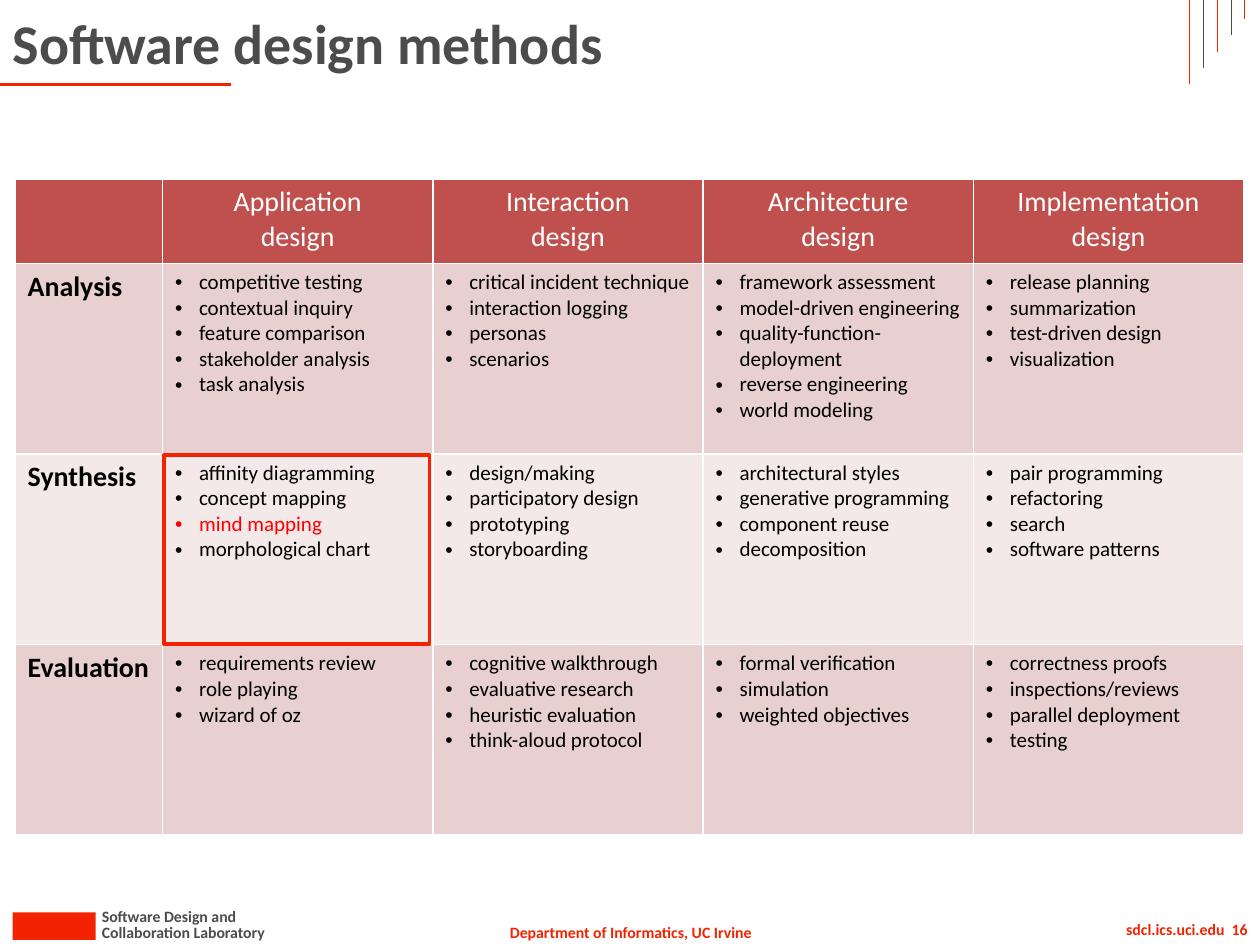
from lxml.etree import SubElement
from pptx import Presentation
from pptx.dml.color import RGBColor
from pptx.enum.shapes import MSO_CONNECTOR, MSO_SHAPE
from pptx.enum.text import MSO_ANCHOR, PP_ALIGN
from pptx.oxml.ns import qn
from pptx.util import Inches, Pt

RED = RGBColor(0xF3, 0x22, 0x00)
BRIGHT_RED = RGBColor(0xFF, 0x00, 0x00)
GRAY = RGBColor(0x4C, 0x4C, 0x4C)
BLACK = RGBColor(0x00, 0x00, 0x00)
WHITE = RGBColor(0xFF, 0xFF, 0xFF)
HEADER_FILL = RGBColor(0xC0, 0x50, 0x4D)
ROW_FILLS = [RGBColor(0xE8, 0xD0, 0xD0), RGBColor(0xF4, 0xE9, 0xE9)]

STAGES = ["Application\vdesign", "Interaction\vdesign",
          "Architecture\vdesign", "Implementation\vdesign"]
METHODS = {
    "Analysis": [
        ["competitive testing", "contextual inquiry", "feature comparison",
         "stakeholder analysis", "task analysis"],
        ["critical incident technique", "interaction logging", "personas", "scenarios"],
        ["framework assessment", "model-driven engineering",
         "quality-function-deployment", "reverse engineering", "world modeling"],
        ["release planning", "summarization", "test-driven design", "visualization"],
    ],
    "Synthesis": [
        ["affinity diagramming", "concept mapping", "mind mapping", "morphological chart"],
        ["design/making", "participatory design", "prototyping", "storyboarding"],
        ["architectural styles", "generative programming", "component reuse",
         "decomposition"],
        ["pair programming", "refactoring", "search", "software patterns"],
    ],
    "Evaluation": [
        ["requirements review", "role playing", "wizard of oz"],
        ["cognitive walkthrough", "evaluative research", "heuristic evaluation",
         "think-aloud protocol"],
        ["formal verification", "simulation", "weighted objectives"],
        ["correctness proofs", "inspections/reviews", "parallel deployment", "testing"],
    ],
}
HIGHLIGHTED_METHOD = "mind mapping"


def write_text(para, text, size=12, color=BLACK, bold=False,
               align=PP_ALIGN.LEFT, bullet=False):
    para.text = text
    para.alignment = align
    for span in para.runs:
        span.font.name = "Calibri"
        span.font.size = Pt(size)
        span.font.bold = bold
        span.font.color.rgb = color
    if bullet:
        properties = para._p.get_or_add_pPr()
        properties.set("marL", str(Inches(0.19)))
        properties.set("indent", str(-Inches(0.19)))
        SubElement(properties, qn("a:buFont"), typeface="Arial")
        SubElement(properties, qn("a:buChar"), char="•")


class SlideBuilder:
    def __init__(self, page):
        self.page = page

    def title(self, text, left, top, width, height):
        box = self.page.shapes.title
        box.left, box.top = Inches(left), Inches(top)
        box.width, box.height = Inches(width), Inches(height)
        box.text_frame.vertical_anchor = MSO_ANCHOR.MIDDLE
        write_text(box.text_frame.paragraphs[0], text, size=32, color=GRAY, bold=True)

    def label(self, text, left, top, width, height, wrap=False, **style):
        box = self.page.shapes.add_textbox(
            Inches(left), Inches(top), Inches(width), Inches(height))
        box.text_frame.word_wrap = wrap
        write_text(box.text_frame.paragraphs[0], text, size=9, bold=True, **style)

    def line(self, start, end, color, weight):
        connector = self.page.shapes.add_connector(
            MSO_CONNECTOR.STRAIGHT, *map(Inches, start + end))
        connector.line.color.rgb = color
        connector.line.width = Pt(weight)
        SubElement(connector._element.spPr, qn("a:effectLst"))

    def rectangle(self, left, top, width, height, fill=None):
        shape = self.page.shapes.add_shape(
            MSO_SHAPE.RECTANGLE, Inches(left), Inches(top), Inches(width), Inches(height))
        shape.shadow.inherit = False
        if fill is None:
            shape.fill.background()
            shape.line.color.rgb = RED
            shape.line.width = Pt(2)
        else:
            shape.fill.solid()
            shape.fill.fore_color.rgb = fill
            shape.line.fill.background()

    def cell(self, cell, fill):
        properties = cell._tc.get_or_add_tcPr()
        for side in "LRTB":
            border = SubElement(properties, qn(f"a:ln{side}"), w=str(Pt(1)))
            paint = SubElement(border, qn("a:solidFill"))
            SubElement(paint, qn("a:srgbClr"), val=str(WHITE))
        cell.fill.solid()
        cell.fill.fore_color.rgb = fill

    def table(self, left, top, width, height, label_width, header_height):
        grid = self.page.shapes.add_table(
            len(METHODS) + 1, len(STAGES) + 1,
            Inches(left), Inches(top), Inches(width), Inches(height)).table
        grid.horz_banding = False
        stage_width = (width - label_width) / len(STAGES)
        for index, column in enumerate(grid.columns):
            column.width = Inches(stage_width if index else label_width)
        method_height = (height - header_height) / len(METHODS)
        for index, row in enumerate(grid.rows):
            row.height = Inches(method_height if index else header_height)

        for column, stage in enumerate([""] + STAGES):
            header = grid.cell(0, column)
            self.cell(header, HEADER_FILL)
            write_text(header.text_frame.paragraphs[0], stage, size=16,
                       color=WHITE, align=PP_ALIGN.CENTER)

        for row, (activity, groups) in enumerate(METHODS.items(), start=1):
            fill = ROW_FILLS[(row - 1) % 2]
            name = grid.cell(row, 0)
            self.cell(name, fill)
            write_text(name.text_frame.paragraphs[0], activity, size=16, bold=True)
            for column, methods in enumerate(groups, start=1):
                entry = grid.cell(row, column)
                self.cell(entry, fill)
                frame = entry.text_frame
                for index, method in enumerate(methods):
                    para = frame.add_paragraph() if index else frame.paragraphs[0]
                    color = BRIGHT_RED if method == HIGHLIGHTED_METHOD else BLACK
                    write_text(para, method, color=color, bullet=True)


def main():
    deck = Presentation()
    deck.slide_width, deck.slide_height = Inches(10), Inches(7.5)
    builder = SlideBuilder(deck.slides.add_slide(deck.slide_layouts[5]))

    builder.label("Department of Informatics, UC Irvine", 3.93, 7.27, 2.15, 0.25,
                  color=RED, align=PP_ALIGN.CENTER)
    builder.rectangle(0.1, 7.24, 0.66, 0.22, fill=RED)
    builder.label("Collaboration Laboratory", 0.71, 7.27, 1.53, 0.25, color=GRAY)
    builder.label("Software Design and", 0.71, 7.15, 1.29, 0.25, color=GRAY)
    builder.label("sdcl.ics.uci.edu  16", 7.84, 7.25, 2.16, 0.25, wrap=True,
                  color=RED, align=PP_ALIGN.RIGHT)

    builder.line((0, 0.67), (1.83, 0.67), RED, 1.5)
    for index in range(5):
        x = 9.44 + 0.11 * index
        builder.line((x, 0.67 - 0.13 * index), (x, 0), GRAY if index % 2 else RED, 0.5)

    builder.table(0.12, 1.42, 9.75, 5.21, label_width=1.17, header_height=0.67)
    builder.title("Software design methods", 0, 0, 9, 0.67)
    builder.rectangle(1.3, 3.61, 2.11, 1.5)
    deck.save("out.pptx")


if __name__ == "__main__":
    main()
